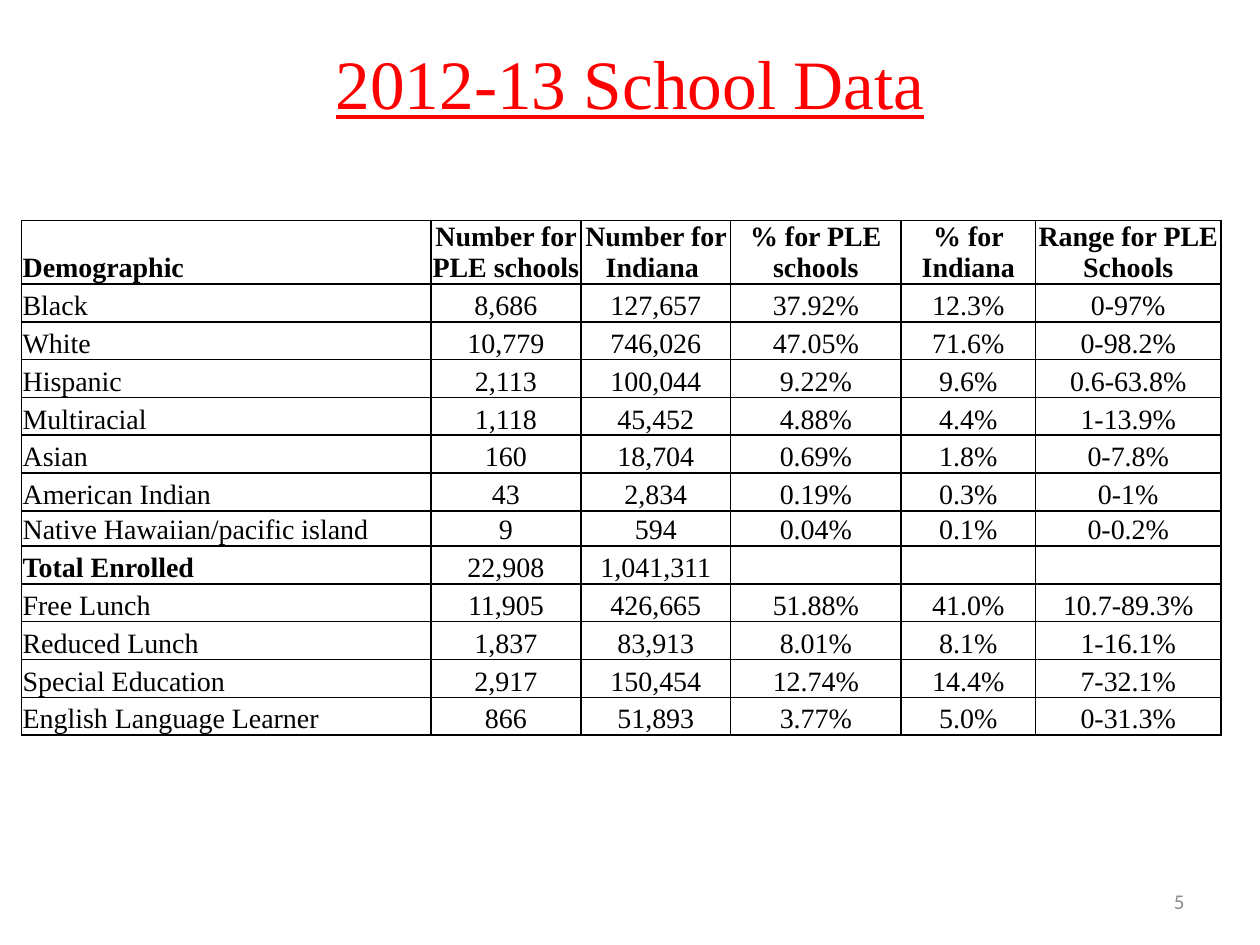
import pptx
import pptx.util
import pptx.dml.color
import pptx.enum.text
import pptx.oxml
import lxml.etree
from pptx.oxml import ns

TITLE = "2012-13 School Data"
PAGE = "5"
HEADER = ["Demographic", "Number for PLE schools", "Number for Indiana ",
          "% for PLE schools", "% for Indiana", "Range for PLE Schools"]
ROWS = [
    ["Black", "8,686", "127,657", "37.92%", "12.3%", "0-97%"],
    ["White", "10,779", "746,026", "47.05%", "71.6%", "0-98.2%"],
    ["Hispanic", "2,113", "100,044", "9.22%", "9.6%", "0.6-63.8%"],
    ["Multiracial", "1,118", "45,452", "4.88%", "4.4%", "1-13.9%"],
    ["Asian", "160", "18,704", "0.69%", "1.8%", "0-7.8%"],
    ["American Indian", "43", "2,834", "0.19%", "0.3%", "0-1%"],
    ["Native Hawaiian/pacific island", "9", "594", "0.04%", "0.1%", "0-0.2%"],
    ["Total Enrolled", "22,908", "1,041,311", "", "", ""],
    ["Free Lunch", "11,905", "426,665", "51.88%", "41.0%", "10.7-89.3%"],
    ["Reduced Lunch", "1,837", "83,913", "8.01%", "8.1%", "1-16.1%"],
    ["Special Education", "2,917", "150,454", "12.74%", "14.4%", "7-32.1%"],
    ["English Language Learner", "866", "51,893", "3.77%", "5.0%", "0-31.3%"],
]
BOLD = {"Total Enrolled", *HEADER}
COLS = [3.25, 1.19, 1.19, 1.35, 1.07, 1.47]
ROW_H = {"Demographic": 0.5, "Native Hawaiian/pacific island": 0.28}
COLORS = {"title": "FF0000", "text": "000000", "page": "8C8C8C", "border": "000000"}
SERIF = "Times New Roman"

inch, pt = pptx.util.Inches, pptx.util.Pt
ALIGN, ANCHOR = pptx.enum.text.PP_ALIGN, pptx.enum.text.MSO_ANCHOR


def write(tf, text, size=16, font=SERIF, color="text", bold=False, underline=False,
          align=ALIGN.CENTER):
    p = tf.paragraphs[0]
    p.alignment = align
    if not text:
        lxml.etree.SubElement(p._p, ns.qn("a:endParaRPr"), sz=str(size * 100))
        return
    r = p.add_run()
    r.text = text
    f = r.font
    f.size, f.name, f.bold, f.underline = pt(size), font, bold, underline
    f.color.rgb = pptx.dml.color.RGBColor.from_string(COLORS[color])


def add_borders(cell, width=1):
    tc_pr = cell._tc.get_or_add_tcPr()
    for side in ("lnL", "lnR", "lnT", "lnB"):
        ln = lxml.etree.SubElement(tc_pr, ns.qn(f"a:{side}"), w=str(pt(width)))
        fill = lxml.etree.SubElement(ln, ns.qn("a:solidFill"))
        lxml.etree.SubElement(fill, ns.qn("a:srgbClr"), val=COLORS["border"])


def place(sp, left, top, width, height):
    sp.left, sp.top, sp.width, sp.height = map(inch, (left, top, width, height))


def main():
    prs = pptx.Presentation()
    prs.slide_width, prs.slide_height = inch(10), inch(7.5)
    s = prs.slides.add_slide(prs.slide_layouts[5])

    title = s.shapes.title
    place(title, 0.5, 0.3, 9, 0.7)
    tf = title.text_frame
    tf.auto_size = pptx.enum.text.MSO_AUTO_SIZE.NONE
    tf.vertical_anchor = ANCHOR.MIDDLE
    write(tf, TITLE, size=39.6, color="title", underline=True)

    data = [HEADER] + ROWS
    heights = [ROW_H.get(row[0], 0.3) for row in data]
    frame = s.shapes.add_table(len(data), len(COLS), inch(0.17), inch(1.75),
                               inch(sum(COLS)), inch(sum(heights)))
    table = frame.table
    table.first_row = table.horz_banding = False
    for col, width in zip(table.columns, COLS):
        col.width = inch(width)
    for i, row in enumerate(data):
        table.rows[i].height = inch(heights[i])
        for j, text in enumerate(row):
            cell = table.cell(i, j)
            cell.margin_left = cell.margin_right = cell.margin_top = inch(0.01)
            cell.margin_bottom = 0
            cell.vertical_anchor = ANCHOR.BOTTOM
            add_borders(cell)
            cell.fill.background()
            write(cell.text_frame, text, bold=text in BOLD,
                  align=ALIGN.CENTER if j else ALIGN.LEFT)

    tf = s.shapes.add_textbox(inch(7.17), inch(6.95), inch(2.33), inch(0.4)).text_frame
    tf.word_wrap = True
    tf.vertical_anchor = ANCHOR.MIDDLE
    write(tf, PAGE, size=12, font="Calibri", color="page", align=ALIGN.RIGHT)

    prs.save("out.pptx")


if __name__ == "__main__":
    main()
